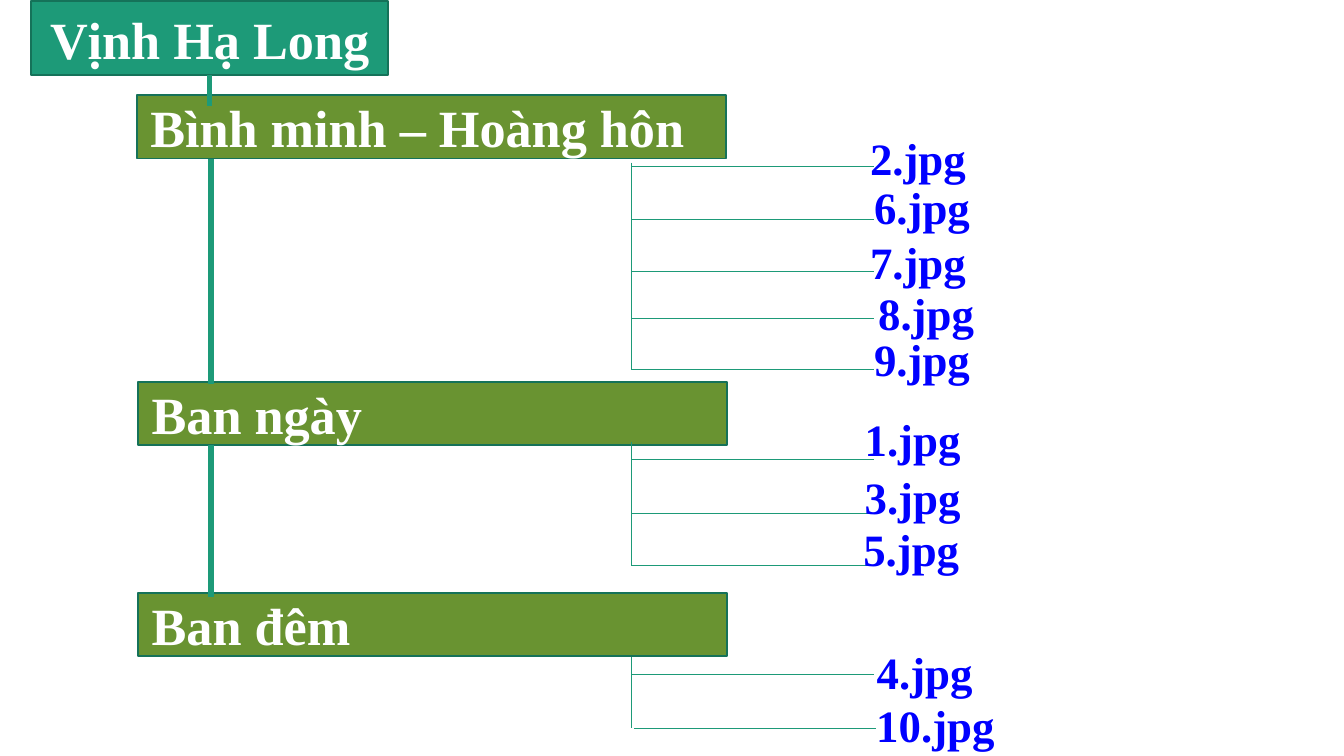
from dataclasses import dataclass

from lxml import etree
from pptx import Presentation
from pptx.dml.color import RGBColor
from pptx.enum.shapes import MSO_CONNECTOR, MSO_SHAPE
from pptx.enum.text import MSO_ANCHOR, PP_ALIGN
from pptx.oxml.ns import qn
from pptx.util import Inches, Pt

LEFT, CENTER = PP_ALIGN.LEFT, PP_ALIGN.CENTER
MIDDLE = MSO_ANCHOR.MIDDLE
RECT = MSO_SHAPE.RECTANGLE
STRAIGHT = MSO_CONNECTOR.STRAIGHT

TEAL, DARK_TEAL, GREEN = "1D9A78", "157259", "699331"
WHITE, BLUE = "FFFFFF", "0000FF"
HEADING = {"name": "Times New Roman", "size": Pt(28), "bold": True}
FILE_NAME = {**HEADING, "size": Pt(24)}

FOLDER_W, FOLDER_H = 4.38, 0.47
BRANCH_X, BRANCH_LENGTH = 4.7, 1.8


@dataclass
class File:
    name: str
    left: float
    top: float
    branch_y: float
    branch_x: float = BRANCH_X


@dataclass
class Folder:
    name: str
    left: float
    top: float
    stem_top: float
    label_w: float
    label_h: float
    files: list[File]


@dataclass
class Trunk:
    x: float
    top: float
    bottom: float


FOLDERS = [
    Folder("Bình minh – Hoàng hôn", 1.02, 0.71, 1.21, 3.54, 0.39, [
        File("2.jpg", 5.06, 0.98, 1.24),
        File("6.jpg", 5.09, 1.34, 1.63),
        File("7.jpg", 5.06, 1.75, 2.02),
        File("8.jpg", 5.12, 2.13, 2.37),
        File("9.jpg", 5.09, 2.47, 2.75),
    ]),
    Folder("Ban ngày", 1.03, 2.84, 3.29, 2.66, 0.47, [
        File("1.jpg", 5.46, 3.03, 3.42),
        File("3.jpg", 5.46, 3.46, 3.82),
        File("5.jpg", 5.45, 3.85, 4.21),
    ]),
    Folder("Ban đêm", 1.03, 4.41, 4.89, 2.66, 0.47, [
        File("4.jpg", 5.55, 4.76, 5.02),
        File("10.jpg", 5.63, 5.16, 5.42, 4.72),
    ]),
]
TRUNKS = [Trunk(1.56, 0.56, 0.79), Trunk(1.57, 1.18, 2.86), Trunk(1.57, 3.31, 4.44)]


def rgb(value: str) -> RGBColor:
    return RGBColor.from_string(value)


def write(sp, text: str, style: dict, color: str, align) -> None:
    tf = sp.text_frame
    tf.word_wrap = True
    tf.vertical_anchor = MIDDLE
    p = tf.paragraphs[0]
    p.alignment = align
    r = p.add_run()
    r.text = text
    for key, value in style.items():
        setattr(r.font, key, value)
    r.font.color.rgb = rgb(color)


def add_box(s, text: str, left: float, top: float, width: float, height: float,
            fill: str, align) -> None:
    sp = s.shapes.add_shape(RECT, *map(Inches, (left, top, width, height)))
    sp.shadow.inherit = False
    sp.fill.solid()
    sp.fill.fore_color.rgb = rgb(fill)
    sp.line.color.rgb = rgb(DARK_TEAL)
    sp.line.width = Pt(1)
    write(sp, text, HEADING, WHITE, align)


def add_line(s, x1: float, y1: float, x2: float, y2: float, weight: float) -> None:
    line = s.shapes.add_connector(STRAIGHT, *map(Inches, (x1, y1, x2, y2)))
    line.line.color.rgb = rgb(TEAL)
    line.line.width = Pt(weight)
    etree.SubElement(line._element.spPr, qn("a:effectLst"))


def add_files(s, folder: Folder) -> None:
    """Draw the stem under a folder, with a branch and a label for each file."""
    add_line(s, BRANCH_X, folder.stem_top, BRANCH_X, folder.files[-1].branch_y, 0.5)
    for file in folder.files:
        add_line(s, file.branch_x, file.branch_y,
                 file.branch_x + BRANCH_LENGTH, file.branch_y, 0.5)
        label = s.shapes.add_textbox(*map(Inches, (
            file.left, file.top, folder.label_w, folder.label_h)))
        write(label, file.name, FILE_NAME, BLUE, CENTER)


def main() -> None:
    prs = Presentation()
    prs.slide_width = Inches(10)
    prs.slide_height = prs.slide_width * 9 // 16
    s = prs.slides.add_slide(prs.slide_layouts[6])

    add_box(s, "Vịnh Hạ Long", 0.23, 0.01, 2.66, 0.55, TEAL, CENTER)
    for folder in FOLDERS:
        add_box(s, folder.name, folder.left, folder.top, FOLDER_W, FOLDER_H, GREEN, LEFT)
    for trunk in TRUNKS:
        add_line(s, trunk.x, trunk.top, trunk.x, trunk.bottom, 3)
    for folder in FOLDERS:
        add_files(s, folder)

    prs.save("out.pptx")


if __name__ == "__main__":
    main()
